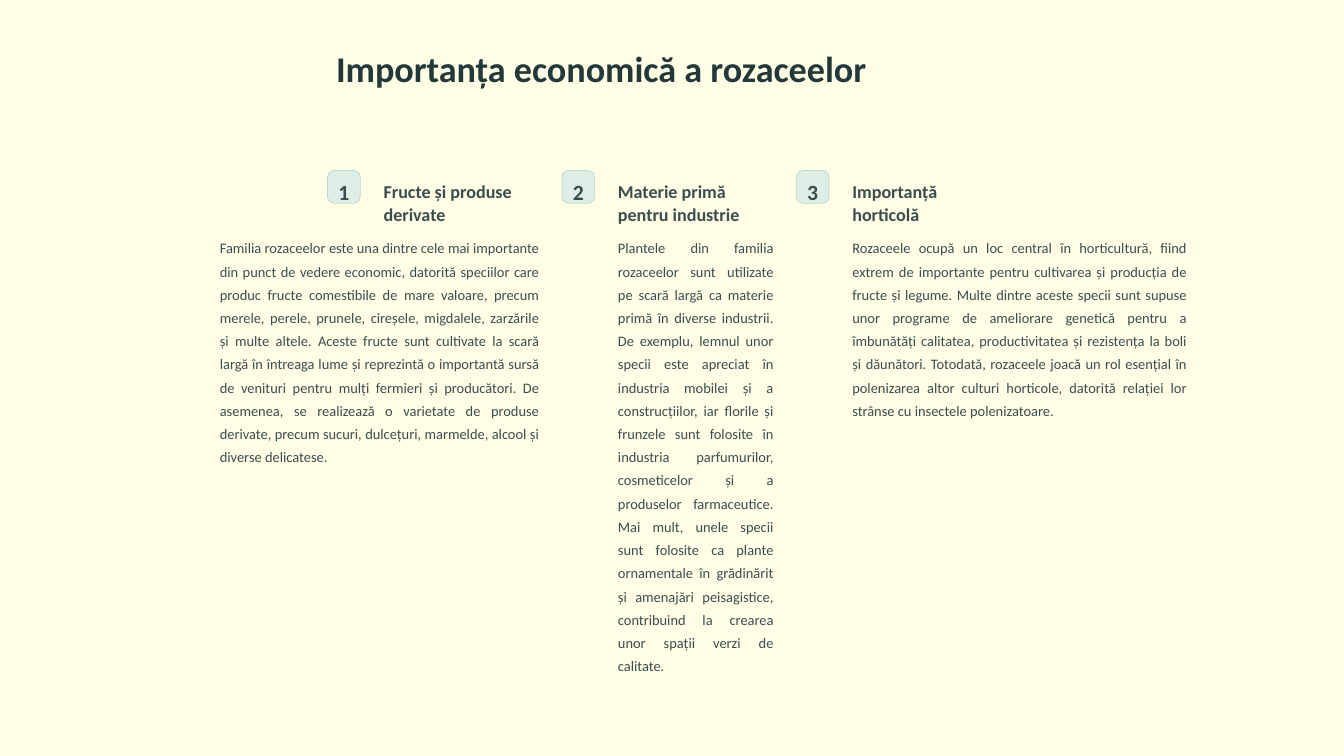
from pptx import Presentation
from pptx.dml.color import RGBColor
from pptx.enum.shapes import MSO_SHAPE
from pptx.enum.text import MSO_ANCHOR, MSO_AUTO_SIZE, PP_ALIGN
from pptx.util import Pt

CREAM = RGBColor(0xFF, 0xFD, 0xE6)
MINT = RGBColor(0xDD, 0xEE, 0xE6)
MINT_EDGE = RGBColor(0xC3, 0xD4, 0xCC)
DARK = RGBColor(0x23, 0x39, 0x39)
SLATE = RGBColor(0x3B, 0x4E, 0x4E)

FONT = "Calibri"
LEFT, TOP, STEP = 280.8, 146.2, 200.9
BADGE = 28
HEADING_DX, HEADING_W = 40.9, 147.6

COLUMNS = [
    ("Fructe și produse derivate",
     "Familia rozaceelor este una dintre cele mai importante din punct de vedere economic, "
     "datorită speciilor care produc fructe comestibile de mare valoare, precum merele, perele, "
     "prunele, cireșele, migdalele, zarzările și multe altele. Aceste fructe sunt cultivate la "
     "scară largă în întreaga lume și reprezintă o importantă sursă de venituri pentru mulți "
     "fermieri și producători. De asemenea, se realizează o varietate de produse derivate, "
     "precum sucuri, dulcețuri, marmelde, alcool și diverse delicatese.",
     (-99.4, 288, 417)),
    ("Materie primă pentru industrie",
     "Plantele din familia rozaceelor sunt utilizate pe scară largă ca materie primă în diverse "
     "industrii. De exemplu, lemnul unor specii este apreciat în industria mobilei și a "
     "construcțiilor, iar florile și frunzele sunt folosite în industria parfumurilor, "
     "cosmeticelor și a produselor farmaceutice. Mai mult, unele specii sunt folosite ca plante "
     "ornamentale în grădinărit și amenajări peisagistice, contribuind la crearea unor spații "
     "verzi de calitate.",
     (HEADING_DX, HEADING_W, 377)),
    ("Importanță horticolă",
     "Rozaceele ocupă un loc central în horticultură, fiind extrem de importante pentru "
     "cultivarea și producția de fructe și legume. Multe dintre aceste specii sunt supuse unor "
     "programe de ameliorare genetică pentru a îmbunătăți calitatea, productivitatea și "
     "rezistența la boli și dăunători. Totodată, rozaceele joacă un rol esențial în polenizarea "
     "altor culturi horticole, datorită relației lor strânse cu insectele polenizatoare.",
     (HEADING_DX, 301, 357)),
]


def write(sp, text, size, spacing, color=SLATE, bold=True, align=PP_ALIGN.LEFT, wrap=True):
    tf = sp.text_frame
    tf.word_wrap = wrap
    tf.auto_size = MSO_AUTO_SIZE.NONE
    tf.vertical_anchor = MSO_ANCHOR.TOP
    p = tf.paragraphs[0]
    p.alignment = align
    p.line_spacing = Pt(spacing)
    r = p.add_run()
    r.text = text
    r.font.name = FONT
    r.font.size = Pt(size)
    r.font.bold = bold
    r.font.color.rgb = color


def add_text(s, x, y, w, h, text, size, spacing, **style):
    sp = s.shapes.add_textbox(Pt(x), Pt(y), Pt(w), Pt(h))
    write(sp, text, size, spacing, **style)
    return sp


def add_title(s, x, y, w, h, text):
    sp = s.shapes.title
    sp.left, sp.top, sp.width, sp.height = Pt(x), Pt(y), Pt(w), Pt(h)
    write(sp, text, 31, 38.8, color=DARK)


def add_badge(s, x, y, number):
    sp = s.shapes.add_shape(MSO_SHAPE.ROUNDED_RECTANGLE, Pt(x), Pt(y), Pt(BADGE), Pt(BADGE))
    sp.adjustments[0] = 0.2
    sp.shadow.inherit = False
    sp.fill.solid()
    sp.fill.fore_color.rgb = MINT
    sp.line.color.rgb = MINT_EDGE
    sp.line.width = Pt(0.6)
    digit_w = 12
    digit = add_text(s, x + (BADGE - digit_w) / 2, y + 2.2, digit_w, 23, str(number),
                     18.6, 23.3, align=PP_ALIGN.CENTER, wrap=False)
    digit.text_frame.margin_left = digit.text_frame.margin_right = 0


def add_column(s, x, y, number, heading, body, body_box):
    add_badge(s, x, y, number)
    add_text(s, x + HEADING_DX, y + 4.3, HEADING_W, 38.9, heading, 15.5, 19.4)
    dx, w, h = body_box
    add_text(s, x + dx, y + 50.4, w, h, body, 12.4, 19.9, bold=False, align=PP_ALIGN.JUSTIFY)


def main():
    prs = Presentation()
    prs.slide_width, prs.slide_height = Pt(1152), Pt(648)
    s = prs.slides.add_slide(prs.slide_layouts[5])
    s.background.fill.solid()
    s.background.fill.fore_color.rgb = CREAM
    add_title(s, LEFT, 34.6, 589.7, 77.8, "Importanța economică a rozaceelor")
    for i, (heading, body, body_box) in enumerate(COLUMNS):
        add_column(s, LEFT + i * STEP, TOP, i + 1, heading, body, body_box)
    prs.save("out.pptx")


if __name__ == "__main__":
    main()
